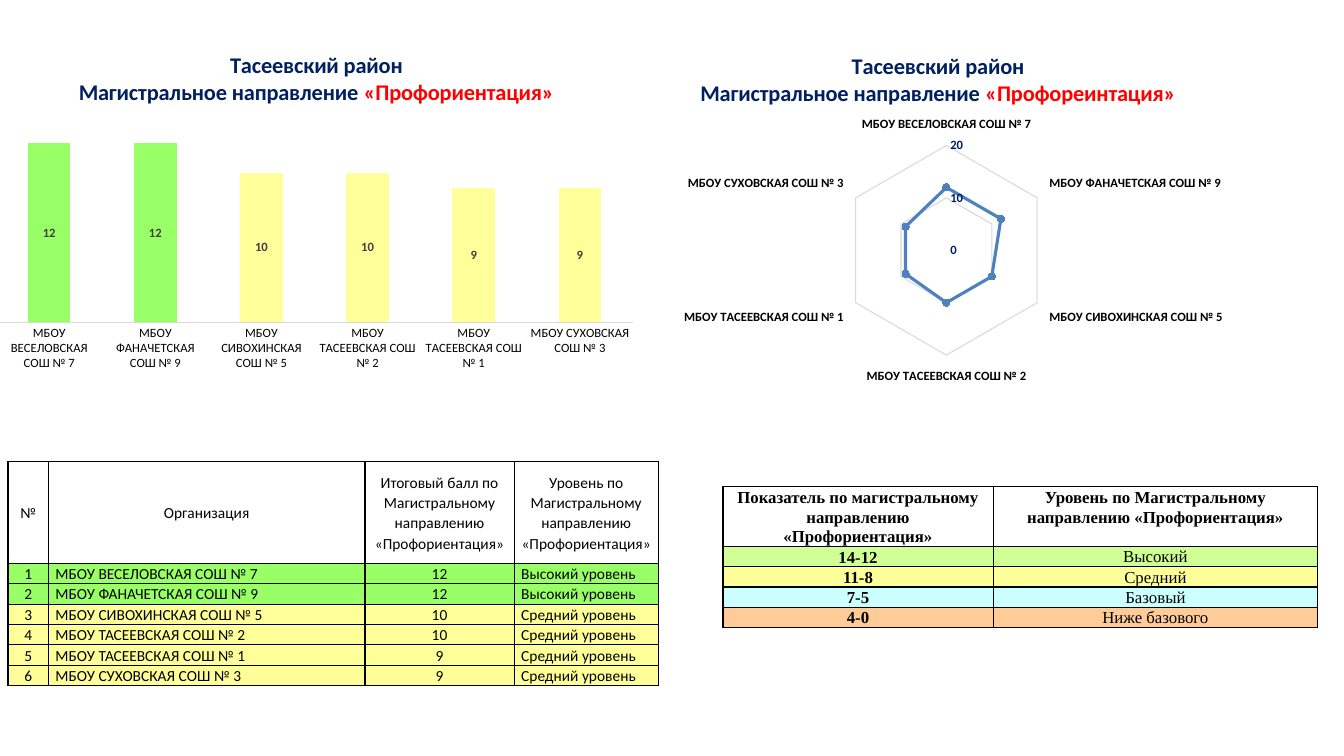
from lxml import etree
from pptx import Presentation
from pptx.chart.data import CategoryChartData as ChartData
from pptx.dml.color import RGBColor
from pptx.enum.chart import XL_CHART_TYPE as Kind, XL_LABEL_POSITION as Spot
from pptx.enum.chart import XL_MARKER_STYLE as Mark, XL_TICK_MARK as Tick
from pptx.enum.text import MSO_ANCHOR as Anchor, PP_ALIGN as Align
from pptx.oxml import parse_xml
from pptx.oxml.ns import nsdecls, qn
from pptx.util import Inches, Pt

LIME, CREAM, NAVY, BLUE, GREY = "99FF66", "FFFF99", "002060", "4F81BD", "D9D9D9"
SCHOOLS = [
    ("МБОУ ВЕСЕЛОВСКАЯ СОШ № 7", 12),
    ("МБОУ ФАНАЧЕТСКАЯ СОШ № 9", 12),
    ("МБОУ СИВОХИНСКАЯ СОШ № 5", 10),
    ("МБОУ ТАСЕЕВСКАЯ СОШ № 2", 10),
    ("МБОУ ТАСЕЕВСКАЯ СОШ № 1", 9),
    ("МБОУ СУХОВСКАЯ СОШ № 3", 9),
]
LEVELS = [
    ("14-12", "Высокий", "CFFF95"),
    ("11-8", "Средний", CREAM),
    ("7-5", "Базовый", "CCFFFF"),
    ("4-0", "Ниже базового", "FFCC99"),
]


def rgb(code):
    return RGBColor.from_string(code)


def style(font, size, color="000000", bold=False, name="Calibri"):
    font.name, font.size, font.bold = name, Pt(size), bold
    font.color.rgb = rgb(color)


def stroke(line, color, width):
    line.color.rgb = rgb(color)
    line.width = Pt(width)


def shade(fill, color):
    fill.solid()
    fill.fore_color.rgb = rgb(color)


def locate(node, index, inner=False, **sizes):
    for old in node.findall(qn("c:layout")):
        node.remove(old)
    layout = parse_xml(f"<c:layout {nsdecls('c')}><c:manualLayout/></c:layout>")
    manual = layout[0]
    if inner:
        etree.SubElement(manual, qn("c:layoutTarget")).set("val", "inner")
    for key in "xy":
        etree.SubElement(manual, qn(f"c:{key}Mode")).set("val", "edge")
    for key, value in sizes.items():
        etree.SubElement(manual, qn(f"c:{key}")).set("val", str(value))
    node.insert(index, layout)


def add_title(chart, theme, x):
    chart.has_title = True
    title = chart.chart_title
    frame = title.text_frame
    frame.text = "Тасеевский район"
    last = frame.add_paragraph()
    for text in ("Магистральное направление ", theme):
        last.add_run().text = text
    for par in frame.paragraphs:
        for run in par.runs:
            style(run.font, 16, "FF0000" if run.text == theme else NAVY, True)
    locate(title._element, 1, x=x, y=0.05)


def add_chart(slide, kind, box, theme, left, plot):
    data = ChartData(number_format="General")
    data.categories = [name for name, score in SCHOOLS]
    data.add_series("Итоговый балл", [score for name, score in SCHOOLS])
    chart = slide.shapes.add_chart(kind, *map(Inches, box), data).chart
    chart.has_legend = False
    style(chart.font, 10)
    add_title(chart, theme, left)
    area = chart._chartSpace.find(".//" + qn("c:plotArea"))
    locate(area, 0, True, **dict(zip("xywh", plot)))
    chart.plots[0].vary_by_categories = False
    for axis in (chart.category_axis, chart.value_axis):
        axis.has_major_gridlines = False
        axis.major_tick_mark = axis.minor_tick_mark = Tick.NONE
    chart.value_axis.minimum_scale = 0
    return chart


def add_bars(slide):
    chart = add_chart(slide, Kind.COLUMN_STACKED, (-0.17, 0.3, 6.58, 3.45),
                      "«Профориентация»", 0.14, (0.02, 0.24, 0.96, 0.6))
    style(chart.category_axis.tick_labels.font, 9)
    stroke(chart.category_axis.format.line, GREY, 1)
    chart.value_axis.maximum_scale = 14
    chart.value_axis.visible = False
    plot = chart.plots[0]
    plot.gap_width, plot.overlap = 150, 100
    bars = plot.series[0]
    shade(bars.format.fill, CREAM)
    for index in range(2):
        shade(bars.points[index].format.fill, LIME)
    labels = bars.data_labels
    labels.show_value = True
    labels.position = Spot.CENTER
    style(labels.font, 9, "404040", True)


def add_radar(slide):
    chart = add_chart(slide, Kind.RADAR_MARKERS, (6.08, 0.3, 6.44, 3.56),
                      "«Профореинтация»", 0.13, (0.352, 0.321, 0.323, 0.585))
    style(chart.category_axis.tick_labels.font, 9, bold=True)
    stroke(chart.category_axis.format.line, GREY, 0.75)
    axis = chart.value_axis
    axis.maximum_scale, axis.major_unit = 20, 10
    axis.has_major_gridlines = True
    stroke(axis.major_gridlines.format.line, GREY, 0.75)
    axis.format.line.fill.background()
    style(axis.tick_labels.font, 9, NAVY, True)
    ring = chart.plots[0].series[0]
    ring.smooth = False
    stroke(ring.format.line, BLUE, 2.25)
    ring.marker.style, ring.marker.size = Mark.CIRCLE, 5
    shade(ring.marker.format.fill, BLUE)
    stroke(ring.marker.format.line, BLUE, 0.75)


def add_borders(cell):
    props = cell._tc.get_or_add_tcPr()
    for side in "LRTB":
        props.append(parse_xml(
            f'<a:ln{side} {nsdecls("a")} w="12700"><a:solidFill>'
            f'<a:srgbClr val="000000"/></a:solidFill></a:ln{side}>'))


def fill_cell(cell, text, color, align, anchor, size, bold, name):
    cell.margin_left = cell.margin_right = Inches(0.07)
    cell.margin_top = cell.margin_bottom = 0
    cell.vertical_anchor = anchor
    add_borders(cell)
    if color:
        shade(cell.fill, color)
    else:
        cell.fill.background()
    cell.text_frame.text = text
    par = cell.text_frame.paragraphs[0]
    par.alignment, par.line_spacing = align, 1.07
    style(par.runs[0].font, size, bold=bold, name=name)


def add_table(slide, left, top, widths, head, rows, colors, look):
    height = head + 0.2 * (len(rows) - 1)
    table = slide.shapes.add_table(
        len(rows), len(widths), Inches(left), Inches(top),
        Inches(sum(widths)), Inches(height)).table
    table.first_row = table.horz_banding = False
    for col, width in zip(table.columns, widths):
        col.width = Inches(width)
    for r, (texts, color) in enumerate(zip(rows, colors)):
        table.rows[r].height = Inches(0.2 if r else head)
        for c, text in enumerate(texts):
            fill_cell(table.cell(r, c), text, color, *look(r, c))


def score_look(r, c):
    if r and c in (1, 3):
        return Align.LEFT, Anchor.BOTTOM, 11, False, "Calibri"
    return Align.CENTER, Anchor.MIDDLE, 11, False, "Calibri"


def level_look(r, c):
    anchor = Anchor.MIDDLE if r and c == 0 else Anchor.TOP
    return Align.CENTER, anchor, 12, r == 0 or c == 0, "Times New Roman"


def add_scores(slide):
    rows = [("№", "Организация",
             "Итоговый балл по Магистральному направлению «Профориентация»",
             "Уровень по Магистральному направлению «Профориентация»")]
    colors = [None]
    for index, (name, score) in enumerate(SCHOOLS, 1):
        high = score >= 12
        level = "Высокий уровень" if high else "Средний уровень"
        rows.append((str(index), name, str(score), level))
        colors.append(LIME if high else CREAM)
    add_table(slide, 0.08, 4.58, (0.4, 3.14, 1.48, 1.43), 1.01, rows, colors, score_look)


def add_levels(slide):
    rows = [("Показатель по магистральному направлению «Профориентация»",
             "Уровень по Магистральному направлению «Профориентация»")]
    rows += [(span, level) for span, level, color in LEVELS]
    colors = [None] + [color for span, level, color in LEVELS]
    add_table(slide, 7.17, 4.83, (2.68, 3.22), 0.59, rows, colors, level_look)


def main():
    deck = Presentation()
    deck.slide_width, deck.slide_height = Inches(13.33), Inches(7.5)
    slide = deck.slides.add_slide(deck.slide_layouts[6])
    add_bars(slide)
    add_scores(slide)
    add_radar(slide)
    add_levels(slide)
    deck.save("out.pptx")


if __name__ == "__main__":
    main()
